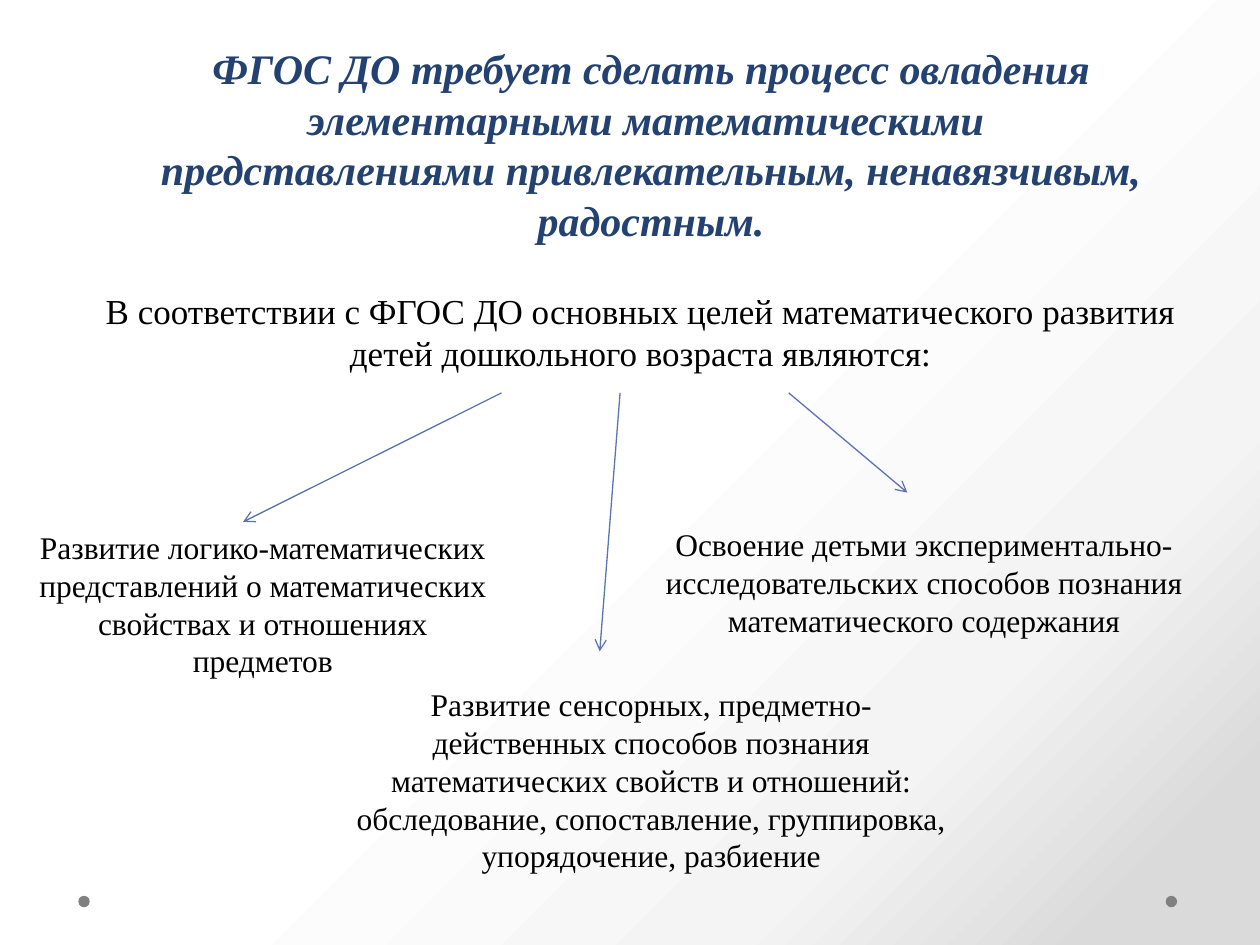
"""Build a slide on the goals of early mathematical development."""
import copy

import pptx
import pptx.dml.color
import pptx.enum.shapes
import pptx.enum.text
import pptx.oxml
import pptx.oxml.ns
import pptx.util
from pptx.util import Cm, Pt

RGBColor = pptx.dml.color.RGBColor
NAVY = RGBColor(0x23, 0x42, 0x71)
BLACK = RGBColor(0x00, 0x00, 0x00)
BLUE = RGBColor(0x5C, 0x72, 0xB2)
GREY = RGBColor(0x80, 0x80, 0x80)
BACKDROP = [
    (0.5, RGBColor(0xFF, 0xFF, 0xFF)),
    (0.76, RGBColor(0xF4, 0xF4, 0xF4)),
    (0.92, RGBColor(0xDA, 0xDA, 0xDA)),
]

FONT = "Times New Roman"
TITLE = {"name": FONT, "size": Pt(24), "bold": True, "italic": True}
LEAD = {"name": FONT, "size": Pt(20)}
GOAL = {"name": FONT, "size": Pt(18)}

TEXTS = [
    ((1.9, 0.74, 22.45, 4.37), TITLE, NAVY, [
        "ФГОС ДО требует сделать процесс овладения элементарными математическими ",
        "представлениями привлекательным, ненавязчивым, радостным.",
    ]),
    ((1.5, 5.72, 22.83, 1.96), LEAD, BLACK, [
        "В соответствии с ФГОС ДО основных целей математического развития "
        "детей дошкольного возраста являются:",
    ]),
    ((0.5, 10.52, 9.6, 3.33), GOAL, BLACK, [
        "Развитие логико-математических представлений о математических "
        "свойствах и отношениях предметов",
    ]),
    ((6.78, 13.69, 12.7, 4.11), GOAL, BLACK, [
        "Развитие сенсорных, предметно-действенных способов познания "
        "математических свойств и отношений: обследование, сопоставление, "
        "группировка, упорядочение, разбиение",
    ]),
    ((12.93, 10.46, 11.4, 2.57), GOAL, BLACK, [
        "Освоение детьми экспериментально-исследовательских способов "
        "познания математического содержания",
    ]),
]

ARROW_TOP = 7.92
ARROWS = [(10.11, 4.9, 10.52), (12.5, 12.09, 13.13), (15.9, 18.29, 9.93)]
DOT_LEFTS = [1.58, 23.5]
DOT_TOP, DOT_SIZE = 18.06, 0.23


def paint_background(page):
    fill = page.background.fill
    fill.gradient()
    fill.gradient_angle = 315
    first = fill.gradient_stops[0]._gs
    first.addnext(copy.deepcopy(first))
    for stop, (position, color) in zip(fill.gradient_stops, BACKDROP):
        stop.position = position
        stop.color.rgb = color


def add_dot(page, left):
    dot = page.shapes.add_shape(
        pptx.enum.shapes.MSO_SHAPE.OVAL,
        Cm(left), Cm(DOT_TOP), Cm(DOT_SIZE), Cm(DOT_SIZE))
    dot.shadow.inherit = False
    dot.fill.solid()
    dot.fill.fore_color.rgb = GREY
    dot.line.fill.background()


def add_text(page, place, style, color, lines):
    box = page.shapes.add_textbox(*map(Cm, place))
    frame = box.text_frame
    frame.word_wrap = True
    frame.text = "\n".join(lines)
    for para in frame.paragraphs:
        para.alignment = pptx.enum.text.PP_ALIGN.CENTER
        for span in para.runs:
            span.font.color.rgb = color
            for name, value in style.items():
                setattr(span.font, name, value)


def add_arrow(page, start, end, bottom):
    arrow = page.shapes.add_connector(
        pptx.enum.shapes.MSO_CONNECTOR.STRAIGHT,
        Cm(start), Cm(ARROW_TOP), Cm(end), Cm(bottom))
    arrow.line.color.rgb = BLUE
    arrow.line.width = Pt(0.75)
    head = pptx.oxml.parse_xml(
        f'<a:tailEnd {pptx.oxml.ns.nsdecls("a")} type="arrow"/>')
    arrow.line._get_or_add_ln().append(head)
    arrow._element.spPr.append(
        pptx.oxml.parse_xml(f'<a:effectLst {pptx.oxml.ns.nsdecls("a")}/>'))


def main():
    deck = pptx.Presentation()
    deck.slide_width, deck.slide_height = Cm(25.4), Cm(19.05)
    page = deck.slides.add_slide(deck.slide_layouts[6])
    paint_background(page)
    for left in DOT_LEFTS:
        add_dot(page, left)
    for text in TEXTS:
        add_text(page, *text)
    for arrow in ARROWS:
        add_arrow(page, *arrow)
    deck.save("out.pptx")


if __name__ == "__main__":
    main()
